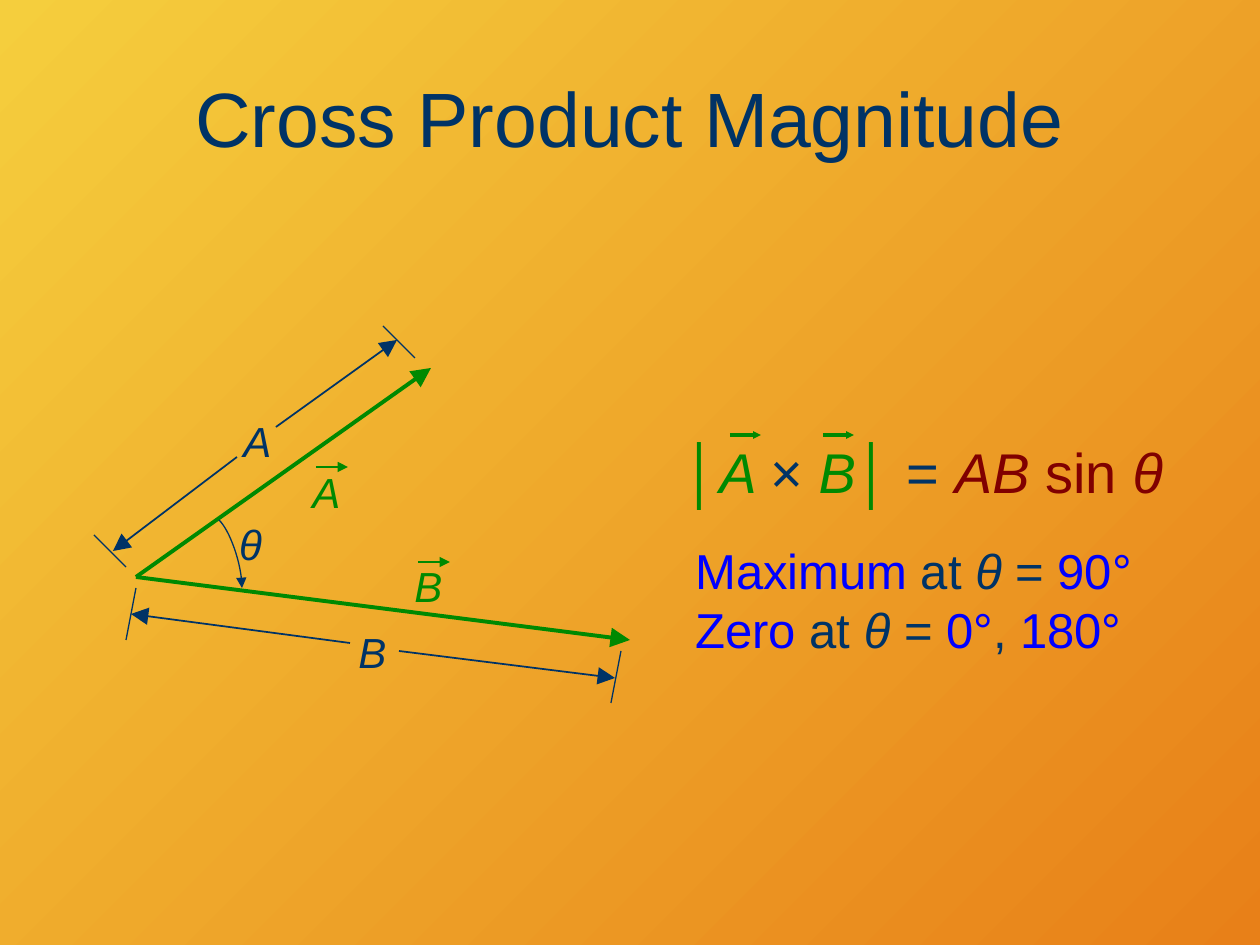
"""Build a slide on the magnitude of the cross product."""
import pptx
import pptx.util
import pptx.dml.color
import pptx.enum.text
import pptx.enum.shapes
import pptx.oxml.ns
import lxml.etree

UNIT = 914400 / 126
FONT = "Arial"
HUES = {"navy": "003366", "green": "008901", "red": "800000", "blue": "0000FF",
        "gold": "F5CE3D", "rust": "E88018"}
ANCHOR = pptx.enum.text.MSO_ANCHOR
ALIGN = pptx.enum.text.PP_ALIGN
FIT = pptx.enum.text.MSO_AUTO_SIZE

TITLE = [[("Cross Product Magnitude", "navy", False)]]
RULE = [[("│", "green", False), ("A ", "green", True), ("× ", "navy", False),
         ("B", "green", True), ("│", "green", False), (" = ", "navy", False),
         ("AB", "red", True), (" sin ", "red", False), ("θ", "red", True)]]
CASES = [("Maximum", ["90°"]), ("Zero", ["0°", "180°"])]
LABELS = [("A", "green", 300, 460), ("B", "green", 402, 554),
          ("A", "navy", 231, 409), ("B", "navy", 346, 620), ("θ", "navy", 224, 512)]
LINES = [
    ("green", 2.25, "lg", [(136, 577, 431, 368), (136, 577, 630, 640)]),
    ("green", 1, "med", [(x, y, x + 32, y) for x, y in [(316, 467), (418, 562)]]),
    ("green", 2.25, "sm", [(x, 435, x + 31, 435) for x in (730, 823)]),
    ("navy", 0.75, None, [(136, 588, 126, 640), (621, 651, 611, 703),
                          (126, 567, 94, 535), (415, 358, 383, 326)]),
    ("navy", 1, "lg", [(399, 651, 615, 678), (237, 457, 113, 551),
                       (350, 643, 131, 614), (276, 427, 397, 340)]),
]
ARC = [(219, 520), (229, 529), (242, 563), (242, 588)]
STEPS = 16


def px(n):
    return pptx.util.Emu(round(n * UNIT))


def hue(name):
    return pptx.dml.color.RGBColor.from_string(HUES[name])


def write(shape, paras, size=24, align=ALIGN.LEFT, anchor=ANCHOR.TOP, wrap=True, fit=FIT.NONE):
    frame = shape.text_frame
    frame.word_wrap = wrap
    frame.auto_size = fit
    frame.vertical_anchor = anchor
    for i, runs in enumerate(paras):
        para = frame.add_paragraph() if i else frame.paragraphs[0]
        para.alignment = align
        for text, tint, slant in runs:
            run = para.add_run()
            run.text = text
            run.font.name = FONT
            run.font.size = pptx.util.Pt(size)
            run.font.italic = slant
            run.font.color.rgb = hue(tint)


def stroke(shape, tint, width, head):
    shape.line.color.rgb = hue(tint)
    shape.line.width = pptx.util.Pt(width)
    if head:
        tag = pptx.oxml.ns.qn("a:tailEnd")
        lxml.etree.SubElement(shape.line._get_or_add_ln(), tag, type="triangle", w=head, len=head)


def box(slide, x, y, w, h):
    return slide.shapes.add_textbox(px(x), px(y), px(w), px(h))


def link(slide, ends, tint, width, head):
    kind = pptx.enum.shapes.MSO_CONNECTOR.STRAIGHT
    line = slide.shapes.add_connector(kind, *[px(n) for n in ends])
    stroke(line, tint, width, head)
    lxml.etree.SubElement(line._element.spPr, pptx.oxml.ns.qn("a:effectLst"))


def curve(t):
    parts = ((1 - t) ** 3, 3 * t * (1 - t) ** 2, 3 * t * t * (1 - t), t ** 3)
    return tuple(sum(k * p[i] for k, p in zip(parts, ARC)) for i in (0, 1))


def arc(slide):
    spots = [tuple(px(n) for n in curve(i / STEPS)) for i in range(STEPS + 1)]
    pen = slide.shapes.build_freeform(*spots[0])
    pen.add_line_segments(spots[1:], close=False)
    shape = pen.convert_to_shape()
    shape.shadow.inherit = False
    shape.fill.background()
    stroke(shape, "navy", 0.75, "med")


def case(word, angles):
    runs = [(word, "blue", False), (" at ", "navy", False),
            ("θ", "navy", True), (" = ", "navy", False)]
    for i, angle in enumerate(angles):
        if i:
            runs.append((", ", "navy", False))
        runs.append((angle, "blue", False))
    return runs


def main():
    deck = pptx.Presentation()
    deck.slide_width, deck.slide_height = px(1260), px(945)
    slide = deck.slides.add_slide(deck.slide_layouts[5])
    fill = slide.background.fill
    fill.gradient()
    fill.gradient_angle = 315
    for stop, name in zip(fill.gradient_stops, ("gold", "rust")):
        stop.color.rgb = hue(name)

    title = slide.shapes.title
    title.left, title.top, title.width, title.height = [px(n) for n in (63, 38, 1134, 158)]
    write(title, TITLE, size=44, align=ALIGN.CENTER, anchor=ANCHOR.MIDDLE)
    write(box(slide, 672, 431, 536, 95), RULE, size=32)
    for tint, width, head, group in LINES:
        for ends in group:
            link(slide, ends, tint, width, head)
    arc(slide)
    for text, tint, x, y in LABELS:
        write(box(slide, x, y, 53, 63), [[(text, tint, True)]],
              align=ALIGN.CENTER, fit=FIT.SHAPE_TO_FIT_TEXT)
    write(box(slide, 683, 534, 479, 130), [case(*c) for c in CASES],
          size=28, wrap=False, fit=FIT.SHAPE_TO_FIT_TEXT)
    deck.save("out.pptx")


if __name__ == "__main__":
    main()
